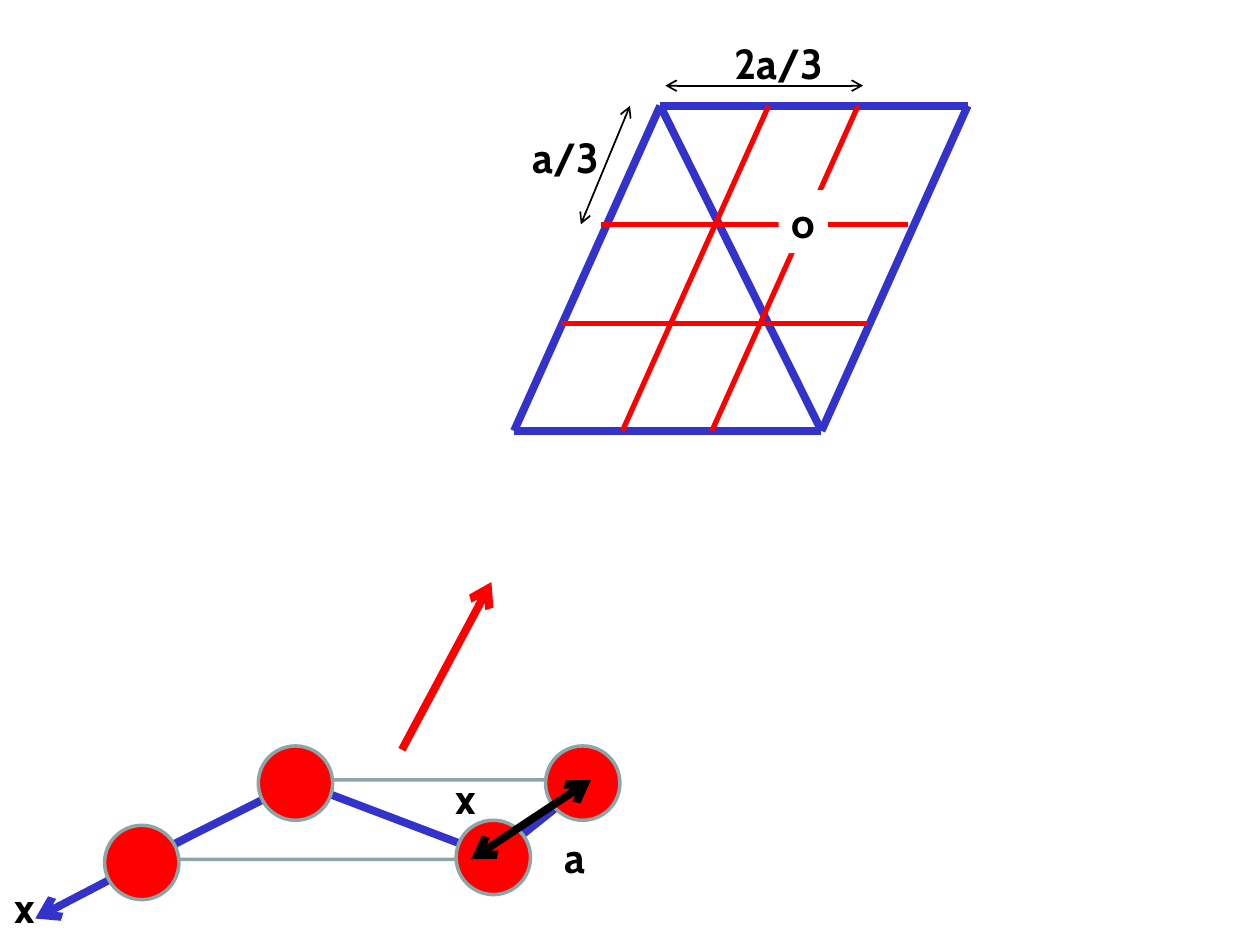
import pptx
import pptx.util
import pptx.dml.color
import pptx.enum.shapes
import pptx.enum.text
import pptx.oxml
import pptx.oxml.ns
from pptx.util import Inches

COLORS = {"bond": "3333CC", "red": "FF0000", "outline": "8AA6A8", "ink": "000000", "paper": "FFFFFF"}
RGB = {name: pptx.dml.color.RGBColor.from_string(value) for name, value in COLORS.items()}


def add_line(shapes, start, end, color, width, arrows=()):
    line = shapes.add_connector(
        pptx.enum.shapes.MSO_CONNECTOR.STRAIGHT,
        Inches(start[0]), Inches(start[1]), Inches(end[0]), Inches(end[1]))
    line.line.color.rgb = RGB[color]
    line.line.width = pptx.util.Pt(width)
    outline = line.line._get_or_add_ln()
    for tag in arrows:
        pptx.oxml.ns.qn(tag)
        outline.append(pptx.oxml.parse_xml(
            f'<{tag} {pptx.oxml.ns.nsdecls("a")} type="arrow"/>'))
    line._element.spPr.append(pptx.oxml.parse_xml(
        f'<a:effectLst {pptx.oxml.ns.nsdecls("a")}/>'))


def add_label(shapes, text, left, top, width, filled=False):
    box = shapes.add_textbox(Inches(left), Inches(top), Inches(width), Inches(0.5))
    if filled:
        box.fill.solid()
        box.fill.fore_color.rgb = RGB["paper"]
    frame = box.text_frame
    frame.word_wrap = True
    frame.auto_size = pptx.enum.text.MSO_AUTO_SIZE.SHAPE_TO_FIT_TEXT
    frame.vertical_anchor = pptx.enum.text.MSO_ANCHOR.MIDDLE
    para = frame.paragraphs[0]
    para.text = text
    para.alignment = pptx.enum.text.PP_ALIGN.CENTER
    para.font.name = "Cabin"
    para.font.size = pptx.util.Pt(24)
    para.font.bold = True
    para.font.color.rgb = RGB["ink"]


deck = pptx.Presentation()
deck.slide_width = Inches(10)
deck.slide_height = Inches(7.5)
page = deck.slides.add_slide(deck.slide_layouts[6])
shapes = page.shapes
one_way = ["a:tailEnd"]
both_ways = ["a:headEnd", "a:tailEnd"]

add_label(shapes, "x", -0.04, 6.95, 0.47, filled=True)
add_line(shapes, (2.24, 6.27), (0.28, 7.29), "bond", 4.5, one_way)

builder = shapes.build_freeform(Inches(2.32), Inches(6.19), scale=1.0)
builder.add_line_segments(
    [(Inches(x), Inches(y)) for x, y in [(1.22, 6.82), (3.9, 6.82), (4.69, 6.19)]], close=True)
plane = builder.convert_to_shape()
plane.shadow.inherit = False
plane.fill.solid()
plane.fill.fore_color.rgb = RGB["paper"]
plane.line.color.rgb = RGB["outline"]
plane.line.width = pptx.util.Pt(2)

for start, end in [((3.98, 6.82), (2.32, 6.19)), ((2.4, 6.19), (1.14, 6.82)), ((4.69, 6.19), (3.9, 6.82))]:
    add_line(shapes, start, end, "bond", 4.5)

for left, top in [(4.33, 5.92), (2.05, 5.92), (3.62, 6.51), (0.83, 6.55)]:
    atom = shapes.add_shape(
        pptx.enum.shapes.MSO_SHAPE.OVAL, Inches(left), Inches(top), Inches(0.59), Inches(0.59))
    atom.shadow.inherit = False
    atom.fill.solid()
    atom.fill.fore_color.rgb = RGB["red"]
    atom.line.color.rgb = RGB["outline"]
    atom.line.width = pptx.util.Pt(2)

spacing = shapes.add_group_shape().shapes
add_line(spacing, (3.74, 6.82), (4.69, 6.19), "ink", 4.5, both_ways)
add_label(spacing, "a", 4.37, 6.55, 0.39, filled=True)

add_line(shapes, (3.19, 5.95), (3.9, 4.62), "red", 4.5, one_way)
add_label(shapes, "x", 3.5, 6.08, 0.39)

top, bottom = 0.84, 3.42
side, slant = 2.44, 1.16
top_left, top_right = (5.24, top), (5.24 + side, top)
bottom_left, bottom_right = (5.24 - slant, bottom), (5.24 - slant + side, bottom)

cell = shapes.add_group_shape().shapes
for start, end in [(bottom_right, top_left), (bottom_left, top_left), (bottom_right, bottom_left),
                   (top_right, top_left), (bottom_right, top_right)]:
    add_line(cell, start, end, "bond", 4.5)

grid = shapes.add_group_shape().shapes
for left, y in [(4.77, 1.78), (4.45, 2.57)]:
    add_line(grid, (left + side, y), (left, y), "red", 3)
for x in [4.94, 5.65]:
    add_line(grid, (x, bottom), (x + slant, top), "red", 3)

for start, end, text, left, label_top, width in [
        ((4.61, 1.78), (5, 0.84), "a/3", 3.98, 0.99, 1.02),
        ((5.28, 0.68), (6.85, 0.68), "2a/3", 5.47, 0.25, 1.42)]:
    dimension = shapes.add_group_shape().shapes
    add_line(dimension, start, end, "ink", 1, both_ways)
    add_label(dimension, text, left, label_top, width)

add_label(shapes, "o", 6.18, 1.51, 0.39, filled=True)

deck.save("out.pptx")
